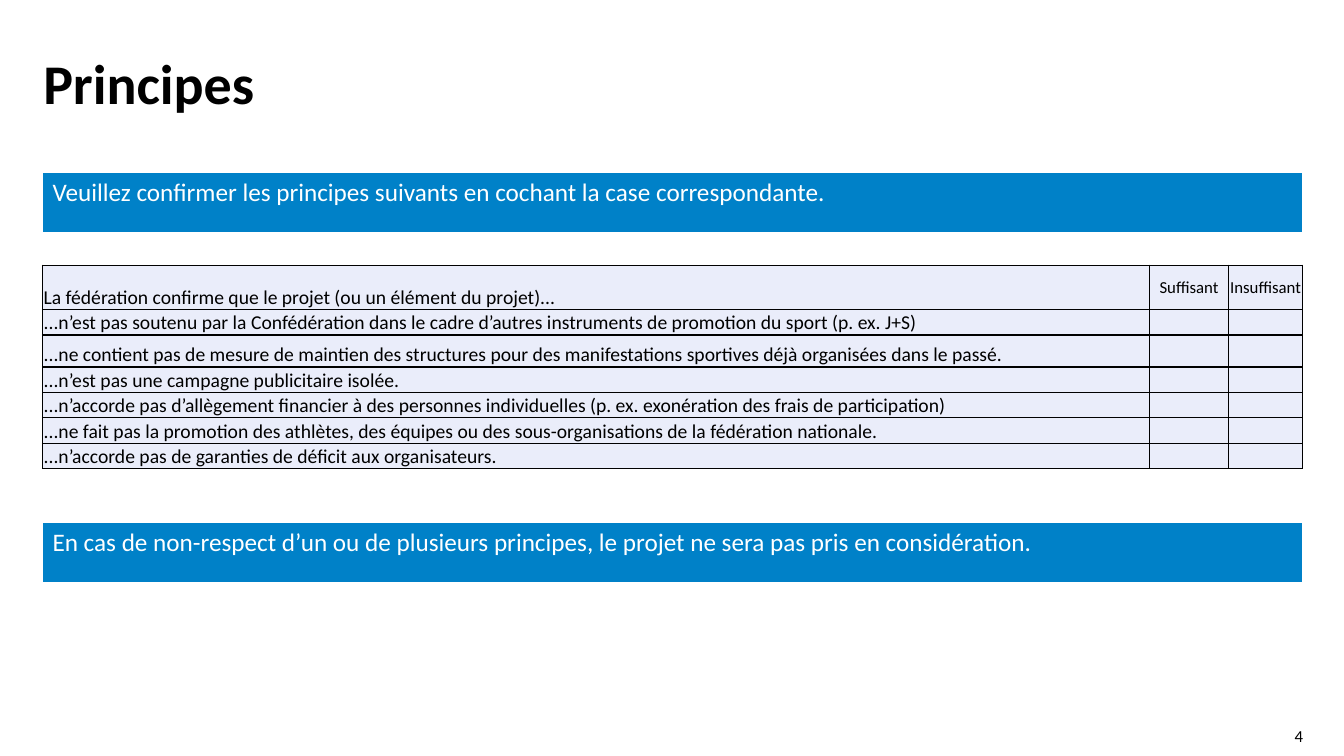
from dataclasses import dataclass

from lxml.etree import SubElement
from pptx import Presentation
from pptx.dml.color import RGBColor as RGB
from pptx.enum.text import MSO_ANCHOR as ANCHOR, PP_ALIGN as ALIGN
from pptx.oxml.ns import qn
from pptx.util import Cm, Pt

# Content
TITLE = "Principes"
PAGE = "4"
BANNERS = [  # top in cm, text
    (4.34, "Veuillez confirmer les principes suivants en cochant la case correspondante."),
    (13.16, "En cas de non-respect d’un ou de plusieurs principes, le projet ne sera pas pris en considération."),
]
HEADER = ("La fédération confirme que le projet (ou un élément du projet)...", "Suffisant", "Insuffisant")
PRINCIPLES = [
    "...n’est pas soutenu par la Confédération dans le cadre d’autres instruments de promotion du sport (p. ex. J+S)",
    "...ne contient pas de mesure de maintien des structures pour des manifestations sportives déjà organisées dans le passé.",
    "...n’est pas une campagne publicitaire isolée.",
    "...n’accorde pas d’allègement financier à des personnes individuelles (p. ex. exonération des frais de participation)",
    "...ne fait pas la promotion des athlètes, des équipes ou des sous-organisations de la fédération nationale.",
    "...n’accorde pas de garanties de déficit aux organisateurs.",
]


@dataclass(frozen=True)
class Theme:
    font: str = "Calibri"
    black: str = "000000"
    white: str = "FFFFFF"
    blue: str = "0081C8"
    pale: str = "EAEDFA"
    title: int = 40
    banner: int = 18
    body: int = 14
    small: int = 12


T = Theme()
LEFT, WIDTH = 1.07, 31.75
COLS = (27.89, 2.01, 1.85)
ROWS = [1.12, 0.64, 0.81] + [0.64] * 4
GRID = {side: (T.black, 1) for side in "LRTB"}
FRAME = {"L": (T.white, 1), "R": (T.white, 1), "T": (T.white, 1), "B": (T.white, 3)}


def style(p, size, color=T.black, bold=False, align=None):
    p.alignment = align
    f = p.font
    f.name, f.size, f.bold = T.font, Pt(size), bold
    f.color.rgb = RGB.from_string(color)


def no_margins(box):
    box.margin_left = box.margin_right = box.margin_top = box.margin_bottom = 0


def add_grid(slide, top, cols, rows):
    frame = slide.shapes.add_table(len(rows), len(cols), Cm(LEFT), Cm(top), Cm(WIDTH), Cm(sum(rows)))
    table = frame.table
    table.first_row = table.horz_banding = False
    for col, width in zip(table.columns, cols):
        col.width = Cm(width)
    for row, height in zip(table.rows, rows):
        row.height = Cm(height)
    return table


def paint(cell, fill, borders):
    tc_pr = cell._tc.get_or_add_tcPr()
    for side, (color, width) in borders.items():
        ln = SubElement(tc_pr, qn(f"a:ln{side}"), w=str(Pt(width)))
        SubElement(SubElement(ln, qn("a:solidFill")), qn("a:srgbClr"), val=color)
    cell.fill.solid()
    cell.fill.fore_color.rgb = RGB.from_string(fill)


prs = Presentation()
prs.slide_width, prs.slide_height = Cm(33.87), Cm(19.05)
slide = prs.slides.add_slide(prs.slide_layouts[5])

# Title
sp = slide.shapes.title
sp.left, sp.top, sp.width, sp.height = Cm(1.09), Cm(1.42), Cm(25.4), Cm(2.16)
tf = sp.text_frame
tf.text = TITLE
tf.vertical_anchor = ANCHOR.TOP
no_margins(tf)
p = tf.paragraphs[0]
p.line_spacing = 0.9
style(p, T.title, bold=True, align=ALIGN.LEFT)

# Blue banners
for top, text in BANNERS:
    cell = add_grid(slide, top, [WIDTH], [1.55]).cell(0, 0)
    cell.text = text
    paint(cell, T.blue, FRAME)
    style(cell.text_frame.paragraphs[0], T.banner, T.white)

# Checklist: the two answer columns stay empty below the header
table = add_grid(slide, 6.68, COLS, ROWS)
for i, texts in enumerate([HEADER] + [(text, "", "") for text in PRINCIPLES]):
    for j, text in enumerate(texts):
        cell = table.cell(i, j)
        no_margins(cell)
        cell.margin_left = cell.margin_right = cell.margin_top = Cm(0.03)
        cell.vertical_anchor = ANCHOR.MIDDLE if j else ANCHOR.BOTTOM
        paint(cell, T.pale, GRID)
        p = cell.text_frame.paragraphs[0]
        size = T.small if j else T.body
        if text:
            p.text = text
        else:  # keeps the empty line from stretching the row
            SubElement(p._p, qn("a:endParaRPr"), sz=str(size * 100))
        style(p, size, align=ALIGN.CENTER if j else ALIGN.LEFT)

# Page number
tf = slide.shapes.add_textbox(Cm(31.65), Cm(18.29), Cm(1.19), Cm(0.51)).text_frame
tf.word_wrap = True
tf.vertical_anchor = ANCHOR.MIDDLE
no_margins(tf)
tf.text = PAGE
style(tf.paragraphs[0], T.small, align=ALIGN.RIGHT)

prs.save("out.pptx")
